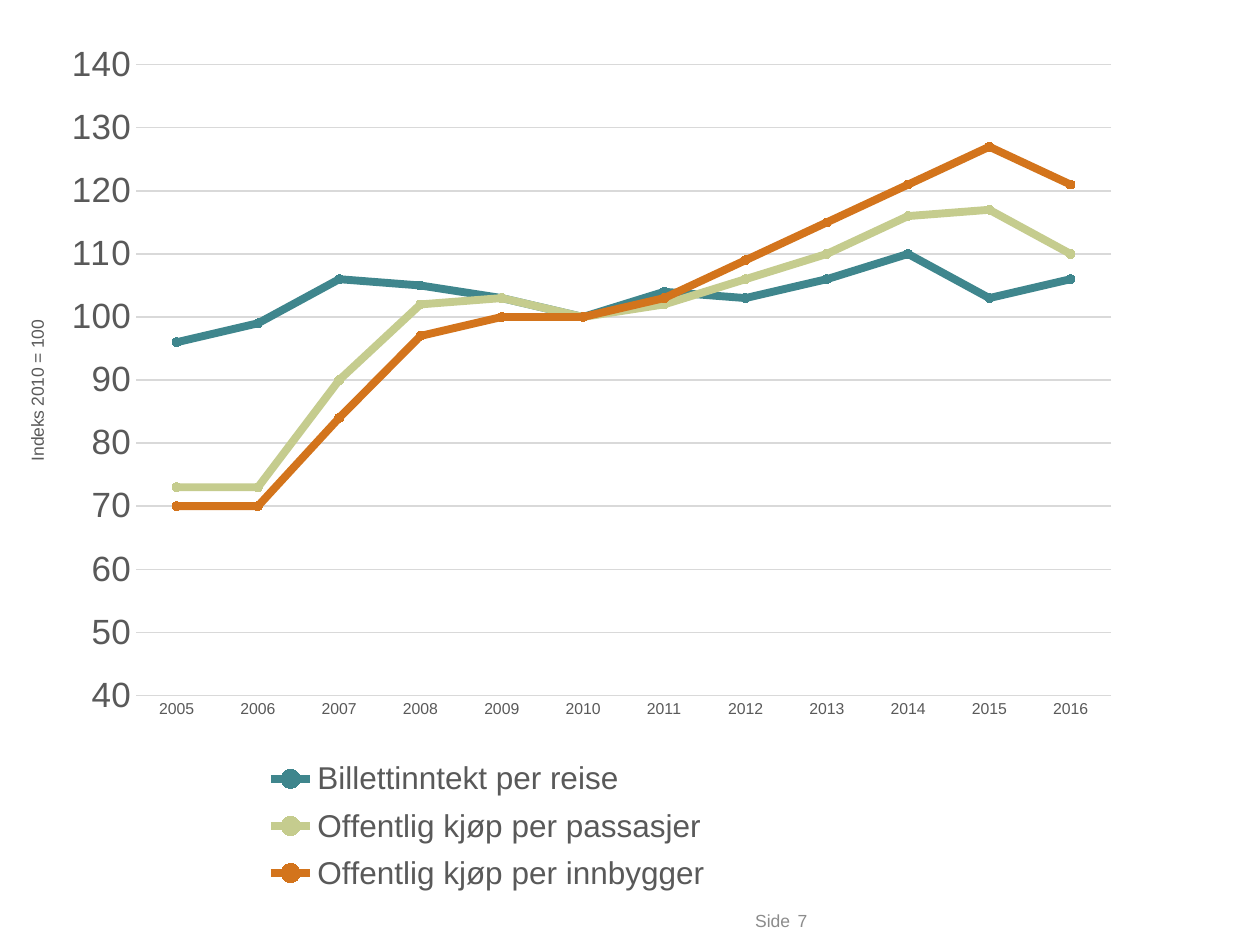
from lxml import etree
from pptx import Presentation
from pptx.chart.data import CategoryChartData
from pptx.dml.color import RGBColor
from pptx.enum.chart import XL_CHART_TYPE, XL_LEGEND_POSITION, XL_MARKER_STYLE, XL_TICK_MARK
from pptx.enum.text import MSO_ANCHOR, PP_ALIGN
from pptx.oxml.ns import qn
from pptx.util import Inches, Pt

LINES = XL_CHART_TYPE.LINE_MARKERS
BOTTOM = XL_LEGEND_POSITION.BOTTOM
CIRCLE = XL_MARKER_STYLE.CIRCLE
NO_TICK = XL_TICK_MARK.NONE
MIDDLE = MSO_ANCHOR.MIDDLE
LEFT, RIGHT = PP_ALIGN.LEFT, PP_ALIGN.RIGHT

FONT = "Arial"
TEAL = RGBColor(0x3F, 0x86, 0x8D)
LIME = RGBColor(0xC5, 0xCC, 0x8E)
ORANGE = RGBColor(0xD3, 0x74, 0x1C)
TEXT = RGBColor(0x59, 0x59, 0x59)
GRID = RGBColor(0xD9, 0xD9, 0xD9)
GREY = RGBColor(0x8C, 0x8C, 0x8C)

SERIES = [
    ("Billettinntekt per reise", TEAL,
     (96, 99, 106, 105, 103, 100, 104, 103, 106, 110, 103, 106)),
    ("Offentlig kjøp per passasjer", LIME,
     (73, 73, 90, 102, 103, 100, 102, 106, 110, 116, 117, 110)),
    ("Offentlig kjøp per innbygger", ORANGE,
     (70, 70, 84, 97, 100, 100, 103, 109, 115, 121, 127, 121)),
]


def style(font, size, color):
    font.name = FONT
    font.size = Pt(size)
    font.bold = False
    font.color.rgb = color


def place(part, index, inner=False, **box):
    """Fix a chart part at x, y (and w, h) as fractions of the chart."""
    for old in part.findall(qn("c:layout")):
        part.remove(old)
    layout = etree.Element(qn("c:layout"))
    part.insert(index, layout)
    manual = etree.SubElement(layout, qn("c:manualLayout"))
    if inner:
        etree.SubElement(manual, qn("c:layoutTarget"), val="inner")
    for key in "xy":
        etree.SubElement(manual, qn(f"c:{key}Mode"), val="edge")
    for key, value in box.items():
        etree.SubElement(manual, qn(f"c:{key}"), val=str(value))


deck = Presentation()
deck.slide_width, deck.slide_height = Inches(10), Inches(7.5)
slide = deck.slides.add_slide(deck.slide_layouts[6])

# Page number
for left, text, align in ((5.79, "Side", RIGHT), (6.33, "7", LEFT)):
    box = slide.shapes.add_textbox(Inches(left), Inches(7.16), Inches(0.48), Inches(0.29))
    frame = box.text_frame
    frame.word_wrap = True
    frame.vertical_anchor = MIDDLE
    frame.margin_left = frame.margin_right = frame.margin_top = frame.margin_bottom = 0
    frame.text = text
    para = frame.paragraphs[0]
    para.alignment = align
    style(para.runs[0].font, 10, GREY)

# Index chart
data = CategoryChartData()
data.categories = [str(year) for year in range(2005, 2017)]
for name, color, values in SERIES:
    data.add_series(name, values)
chart = slide.shapes.add_chart(
    LINES, Inches(0), Inches(0.3), Inches(9), Inches(7.15), data).chart
chart.has_title = False
chart.font.name = FONT
chart.font.size = Pt(10)

plot = chart.plots[0]
plot.vary_by_categories = False
for line, (name, color, values) in zip(plot.series, SERIES):
    line.smooth = False
    line.format.line.color.rgb = color
    line.format.line.width = Pt(4.5)
    mark = line.marker
    mark.style = CIRCLE
    mark.size = 5
    mark.format.fill.solid()
    mark.format.fill.fore_color.rgb = color
    mark.format.line.color.rgb = color

years = chart.category_axis
years.major_tick_mark = years.minor_tick_mark = NO_TICK
years.format.line.color.rgb = GRID
years.format.line.width = Pt(0.75)
style(years.tick_labels.font, 9, TEXT)

index = chart.value_axis
index.minimum_scale, index.maximum_scale, index.major_unit = 40, 140, 10
index.major_tick_mark = index.minor_tick_mark = NO_TICK
index.format.line.fill.background()
index.major_gridlines.format.line.color.rgb = GRID
index.major_gridlines.format.line.width = Pt(0.75)
style(index.tick_labels.font, 20, TEXT)

title = index.axis_title
title.text_frame.text = "Indeks 2010 = 100"
style(title.text_frame.paragraphs[0].runs[0].font, 10, TEXT)
title.text_frame._txBody.find(qn("a:bodyPr")).set("rot", "-5400000")

chart.has_legend = True
legend = chart.legend
legend.position = BOTTOM
legend.include_in_layout = False
style(legend.font, 18, TEXT)

area = chart._chartSpace.find(".//" + qn("c:plotArea"))
place(area, 0, inner=True, x=0.12, y=0.03, w=0.86, h=0.7)
place(title._element, 1, x=0.02, y=0.31)
place(legend._element, 1, x=0.22, y=0.79, w=0.42, h=0.17)

deck.save("out.pptx")
